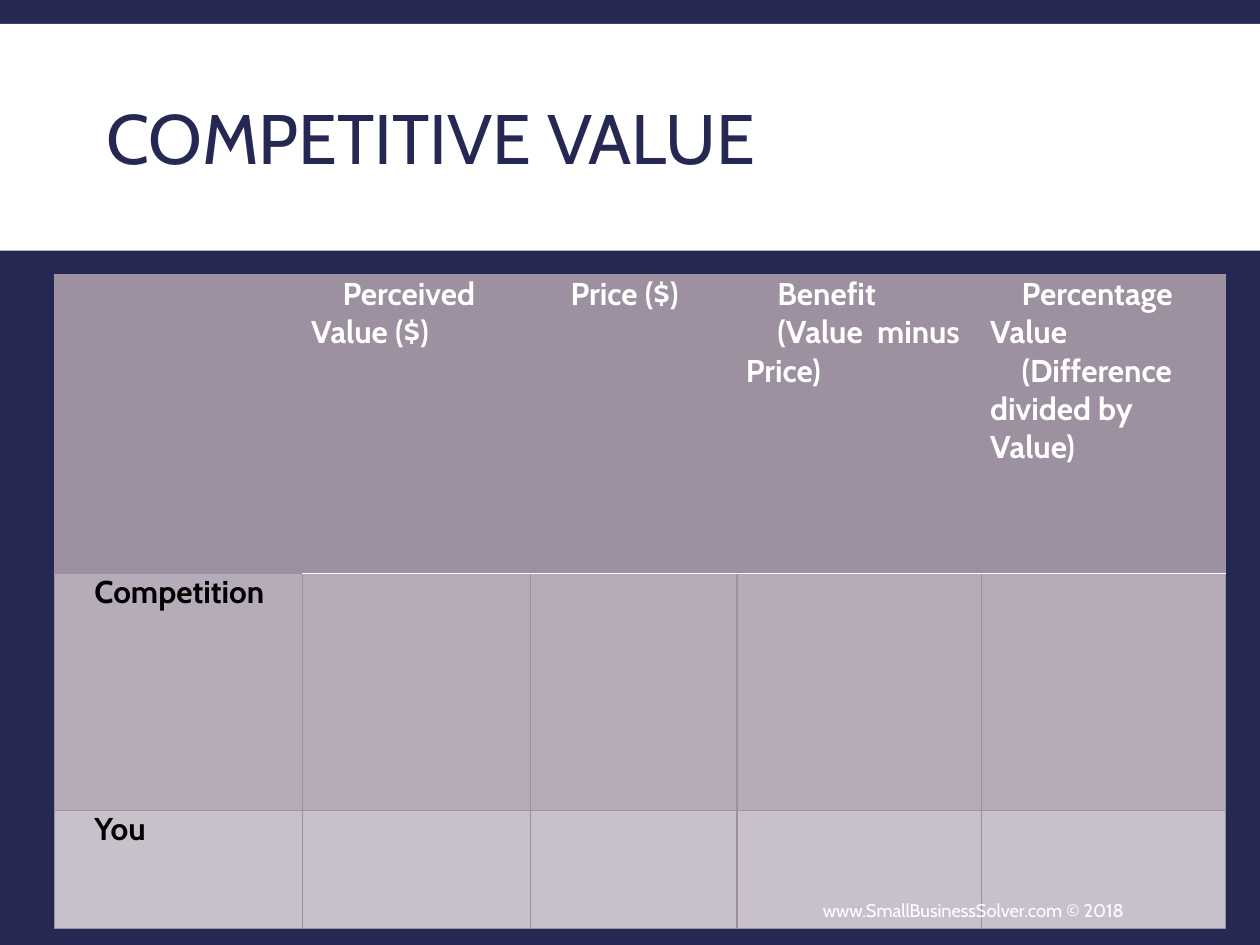
import pptx
import pptx.util
import pptx.dml.color
import pptx.enum.shapes
import pptx.enum.text
import pptx.oxml
import pptx.oxml.ns

Inches = pptx.util.Inches
Pt = pptx.util.Pt

COLORS = {
    "navy": "242852",
    "white": "FFFFFF",
    "black": "000000",
    "mauve": "9D90A0",
    "band_dark": "B6ACB9",
    "band_light": "C8C0CB",
}


class SlideBuilder:
    font = "Cabin"

    def __init__(self, prs):
        self.slide = prs.slides.add_slide(prs.slide_layouts[6])

    def rgb(self, name):
        return pptx.dml.color.RGBColor.from_string(COLORS[name])

    def background(self, color):
        fill = self.slide.background.fill
        fill.solid()
        fill.fore_color.rgb = self.rgb(color)

    def style(self, p, size, color, bold=False):
        for r in p.runs:
            r.font.name = self.font
            r.font.size = Pt(size)
            r.font.bold = bold
            r.font.color.rgb = self.rgb(color)

    def rect(self, x, y, w, h, color):
        sp = self.slide.shapes.add_shape(
            pptx.enum.shapes.MSO_SHAPE.RECTANGLE,
            Inches(x), Inches(y), Inches(w), Inches(h))
        sp.shadow.inherit = False
        sp.fill.solid()
        sp.fill.fore_color.rgb = self.rgb(color)
        sp.line.fill.background()

    def text(self, x, y, w, h, text, size, color, align="LEFT", spacing=1.0):
        sp = self.slide.shapes.add_textbox(
            Inches(x), Inches(y), Inches(w), Inches(h))
        tf = sp.text_frame
        tf.word_wrap = True
        tf.vertical_anchor = pptx.enum.text.MSO_ANCHOR.MIDDLE
        tf.text = text
        p = tf.paragraphs[0]
        p.alignment = getattr(pptx.enum.text.PP_ALIGN, align)
        p.line_spacing = spacing
        self.style(p, size, color)

    def border(self, cell, side, color, width):
        ns = pptx.oxml.ns.nsdecls("a")
        cell._tc.get_or_add_tcPr().append(pptx.oxml.parse_xml(
            f'<a:ln{side} {ns} w="{Pt(width)}"><a:solidFill>'
            f'<a:srgbClr val="{COLORS[color]}"/></a:solidFill></a:ln{side}>'))

    def cell(self, cell, text, fill, color, edges):
        # Borders come before the fill in the cell properties
        for side in "LRTB":
            self.border(cell, side, *edges.get(side, ("mauve", 0.75)))
        cell.fill.solid()
        cell.fill.fore_color.rgb = self.rgb(fill)
        cell.margin_left = cell.margin_right = Inches(0.07)
        cell.margin_top = cell.margin_bottom = 0
        cell.text_frame.text = text
        for p in cell.text_frame.paragraphs:
            p._p.get_or_add_pPr().set("indent", str(Inches(0.25)))
            self.style(p, 18, color, bold=True)

    def table(self, x, y, widths, heights, rows, fills, inks):
        table = self.slide.shapes.add_table(
            len(heights), len(widths), Inches(x), Inches(y),
            Inches(sum(widths)), Inches(sum(heights))).table
        table.horz_banding = False
        for column, w in zip(table.columns, widths):
            column.width = Inches(w)
        for row, h in zip(table.rows, heights):
            row.height = Inches(h)
        # White rule under the header, except above the row labels
        rule = ("white", 1)
        for i, texts in enumerate(rows):
            for j, text in enumerate(texts):
                edges = {}
                if j and i < 2:
                    edges["B" if i == 0 else "T"] = rule
                self.cell(table.cell(i, j), text, fills[i], inks[i], edges)


def main():
    prs = pptx.Presentation()
    prs.slide_width, prs.slide_height = Inches(10), Inches(7.5)
    s = SlideBuilder(prs)

    # Title band
    s.background("navy")
    s.rect(0, 0.19, 10, 1.8, "white")
    s.text(0.75, 0.31, 8.5, 1.65, "COMPETITIVE VALUE", 40, "navy", spacing=0.85)

    # Comparison table
    blanks = [""] * 4
    s.table(
        0.43, 2.18,
        widths=[1.97, 1.81, 1.64, 1.94, 1.94],
        heights=[2.37, 1.88, 0.94],
        rows=[
            ["", "Perceived Value ($)", "Price ($)",
             "Benefit\n(Value  minus Price)",
             "Percentage Value\n(Difference divided by Value)"],
            ["Competition"] + blanks,
            ["You"] + blanks,
        ],
        fills=["mauve", "band_dark", "band_light"],
        inks=["white", "black", "black"])

    # Footer
    s.text(4.58, 7.02, 4.44, 0.4, "www.SmallBusinessSolver.com © 2018",
           10.5, "white", align="RIGHT")

    prs.save("out.pptx")


if __name__ == "__main__":
    main()
